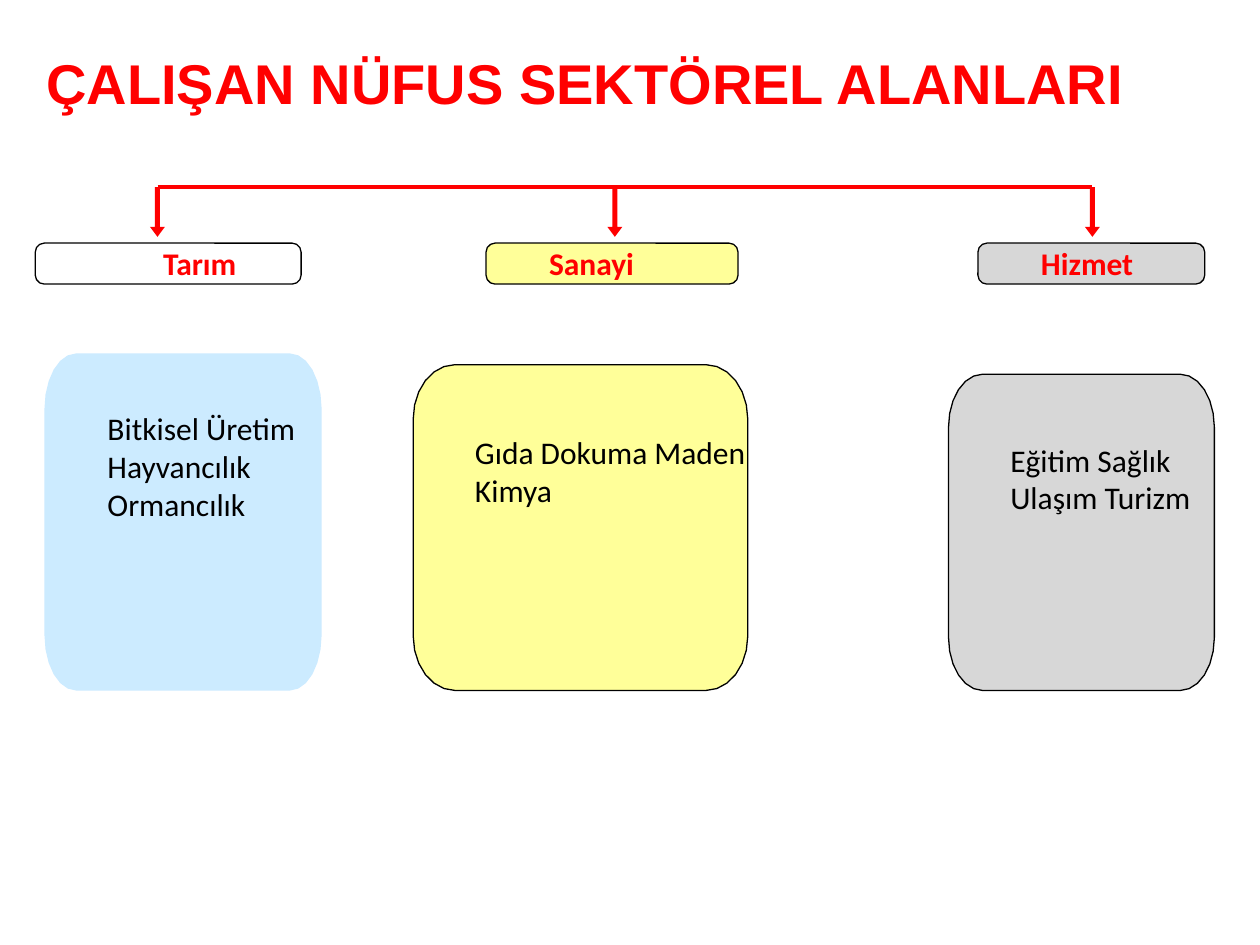
"""Builds a slide on the three sectors of the working population."""
from math import cos, pi, sin
from lxml import etree
from pptx import Presentation
from pptx.dml.color import RGBColor
from pptx.enum.shapes import MSO_CONNECTOR, MSO_SHAPE
from pptx.enum.text import MSO_ANCHOR, PP_ALIGN
from pptx.oxml.ns import qn
from pptx.util import Inches, Pt

LINE = MSO_CONNECTOR.STRAIGHT
ROUND = MSO_SHAPE.ROUNDED_RECTANGLE
LEFT, MID = PP_ALIGN.LEFT, PP_ALIGN.CENTER
TOP, HALF = MSO_ANCHOR.TOP, MSO_ANCHOR.MIDDLE

HUES = {"red": "FF0000", "black": "000000", "white": "FFFFFF",
        "blue": "CCEBFF", "yellow": "FFFF99", "gray": "D7D7D7"}
COLS, ROWS = 100, 75
TITLE = "ÇALIŞAN NÜFUS SEKTÖREL ALANLARI"
SECTORS = [
    {"name": "Tarım", "jobs": "Bitkisel Üretim Hayvancılık Ormancılık",
     "arrow": 12.5, "tag": (2.8, 21.1), "card": (3.53, 28.05, 22),
     "bend": (2.5, 4.4), "tint": None, "fill": "blue", "edge": None,
     "align": MID, "pads": (5, 4.4)},
    {"name": "Sanayi", "jobs": "Gıda Dokuma Maden Kimya",
     "arrow": 48.8, "tag": (38.58, 20), "card": (32.8, 28.95, 26.55),
     "bend": (3.3, 4.3), "tint": "yellow", "fill": "yellow", "edge": "black",
     "align": LEFT, "pads": (4.9, 5.4)},
    {"name": "Hizmet", "jobs": "Eğitim Sağlık Ulaşım Turizm",
     "arrow": 86.7, "tag": (77.62, 18), "card": (75.28, 29.7, 21.1),
     "bend": (2.7, 4.2), "tint": "gray", "fill": "gray", "edge": "black",
     "align": LEFT, "pads": (4.9, 5.27)},
]
BAR, NECK, TIP = 14.85, 18, 18.8
STEM, HEAD = 0.2, 0.6
TAG_TOP, TAG_TALL = 19.3, 3.25
CARD_END = 54.8
INDENT, STEPS = 5, 6

deck = Presentation()
deck.slide_width, deck.slide_height = Inches(10), Inches(7.5)
slide = deck.slides.add_slide(deck.slide_layouts[6])
shapes = slide.shapes


def hue(name):
    return RGBColor.from_string(HUES[name])


def across(cols):
    return round(deck.slide_width * cols / COLS)


def down(rows):
    return round(deck.slide_height * rows / ROWS)


def place(x, y, wide, tall):
    return across(x), down(y), across(wide), down(tall)


def paint(shape, fill, edge):
    shape.shadow.inherit = False
    if fill:
        shape.fill.solid()
        shape.fill.fore_color.rgb = hue(fill)
    else:
        shape.fill.background()
    if edge:
        shape.line.color.rgb = hue(edge)
        shape.line.width = Pt(0.75)
    else:
        shape.line.fill.background()


def draw_paths(paths, fill, edge):
    paths = [[(across(x), down(y)) for x, y in path] for path in paths]
    pen = shapes.build_freeform(*paths[0][0])
    for spot, path in enumerate(paths):
        if spot:
            pen.move_to(*path[0])
        pen.add_line_segments(path[1:], close=True)
    paint(pen.convert_to_shape(), fill, edge)


def arrow(x):
    return [(x - STEM, BAR), (x + STEM, BAR), (x + STEM, NECK), (x + HEAD, NECK),
            (x, TIP), (x - HEAD, NECK), (x - STEM, NECK)]


def curve(x, y, wide, tall, bend):
    rx, ry = bend
    hubs = [(x + wide - rx, y + tall - ry), (x + rx, y + tall - ry),
            (x + rx, y + ry), (x + wide - rx, y + ry)]
    return [(hx + rx * cos(turn), hy + ry * sin(turn))
            for quad, (hx, hy) in enumerate(hubs)
            for turn in [(quad + step / STEPS) * pi / 2 for step in range(STEPS + 1)]]


def write(text, area, size, face, tone, bold, pads, align=LEFT, anchor=TOP):
    frame = shapes.add_textbox(*place(*area)).text_frame
    frame.word_wrap = True
    frame.vertical_anchor = anchor
    frame.margin_left, frame.margin_top = across(pads[0]), down(pads[1])
    frame.margin_right = frame.margin_bottom = 0
    para = frame.paragraphs[0]
    para.text, para.alignment = text, align
    font = para.font
    font.name, font.size, font.bold = face, Pt(size), bold
    font.color.rgb = hue(tone)


slide.background.fill.solid()
slide.background.fill.fore_color.rgb = hue("white")
write(TITLE, (2.7, 3.3, 92.1, 6.5), 32, "Arial", "red", True, (1, 0), anchor=HALF)

stops = [item["arrow"] for item in SECTORS]
bar = shapes.add_connector(LINE, across(stops[0]), down(BAR), across(stops[-1]), down(BAR))
bar.line.color.rgb = hue("red")
bar.line.width = Pt(2.25)
etree.SubElement(bar._element.spPr, qn("a:effectLst"))
draw_paths([arrow(x) for x in stops], "red", None)

for item in SECTORS:
    x, wide = item["tag"]
    tag = x, TAG_TOP, wide, TAG_TALL
    box = shapes.add_shape(ROUND, *place(*tag))
    box.adjustments[0] = 0.22
    paint(box, item["tint"], "black")
    write(item["name"], tag, 18, "Calibri", "red", True, (INDENT, 0.1), item["align"])
    x, y, wide = item["card"]
    card = x, y, wide, CARD_END - y
    draw_paths([curve(*card, item["bend"])], item["fill"], item["edge"])
    write(item["jobs"], card, 18, "Calibri", "black", False, item["pads"])

deck.save("out.pptx")
